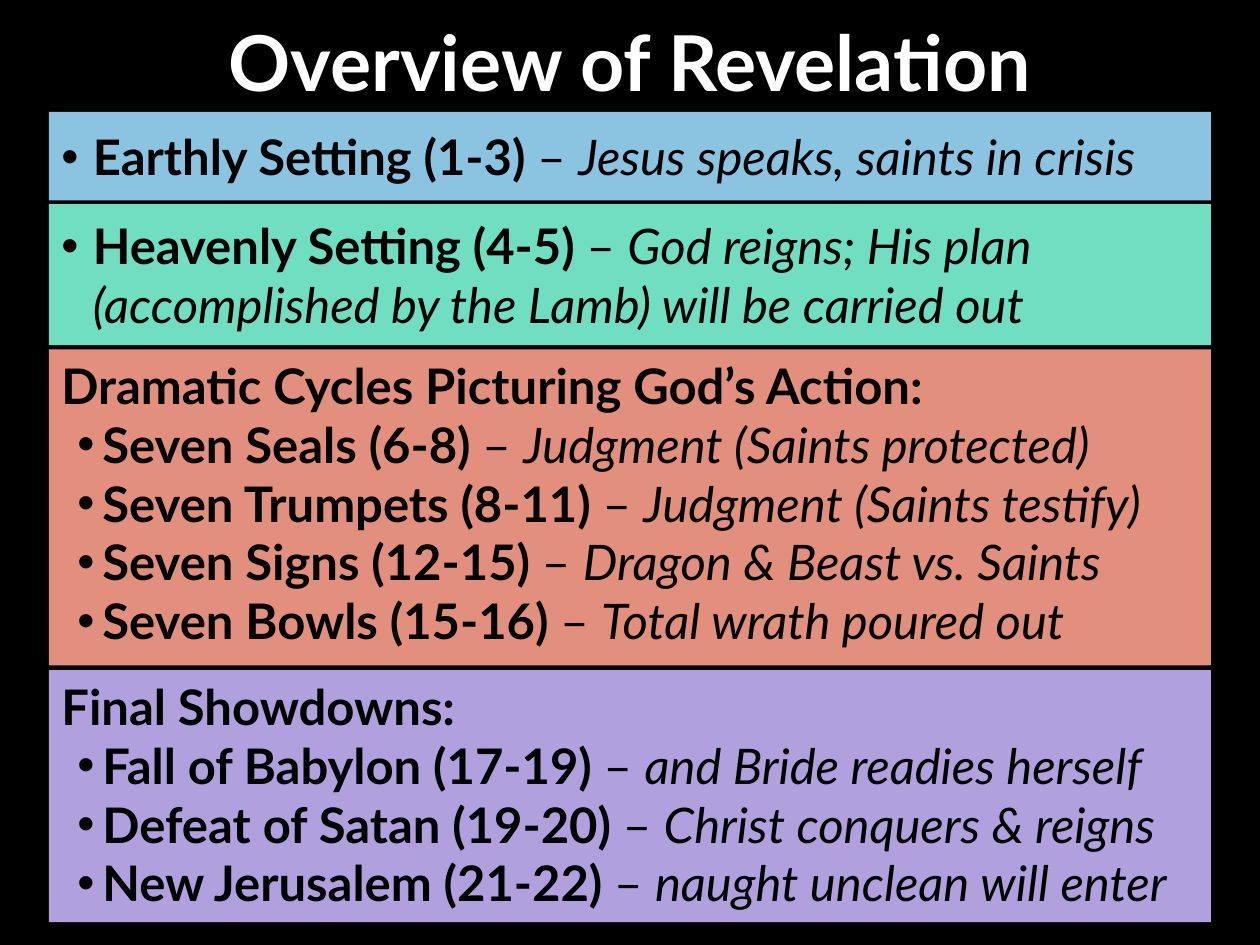
"""Build the Overview of Revelation slide."""
from dataclasses import dataclass

from lxml.etree import SubElement
from pptx import Presentation
from pptx.dml.color import RGBColor
from pptx.enum.shapes import MSO_SHAPE
from pptx.enum.text import MSO_ANCHOR, PP_ALIGN
from pptx.oxml.ns import qn
from pptx.util import Pt

COLORS = {
    "background": "000000", "title": "FFFFFF", "text": "000000",
    "earth": "8BC4E0", "heaven": "70DEC1", "cycles": "E28F7D", "final": "B0A0DD",
}
FONT = "Lato"
BAND_LEFT, BAND_WIDTH = 28, 664


@dataclass
class Band:
    """A coloured band with an optional heading and bulleted entries."""
    color: str
    top: float
    height: float
    entries: list[tuple[str, str]]
    heading: str = ""


BANDS = [
    Band("earth", 64, 50.5, [("Earthly Setting (1-3)", "Jesus speaks, saints in crisis")]),
    Band("heaven", 116.7, 80.6, [
        ("Heavenly Setting (4-5)",
         "God reigns; His plan (accomplished by the Lamb) will be carried out"),
    ]),
    Band("cycles", 199.6, 180.7, [
        ("Seven Seals (6-8)", "Judgment (Saints protected)"),
        ("Seven Trumpets (8-11)", "Judgment (Saints testify)"),
        ("Seven Signs (12-15)", "Dragon & Beast vs. Saints"),
        ("Seven Bowls (15-16)", "Total wrath poured out"),
    ], "Dramatic Cycles Picturing God’s Action:"),
    Band("final", 383, 144, [
        ("Fall of Babylon (17-19)", "and Bride readies herself"),
        ("Defeat of Satan (19-20)", "Christ conquers & reigns"),
        ("New Jerusalem (21-22)", "naught unclean will enter"),
    ], "Final Showdowns:"),
]


def color_of(name: str) -> RGBColor:
    """Look up a named colour."""
    return RGBColor.from_string(COLORS[name])


def add_span(para, text: str, size: float = 28, color: str = "text",
             bold: bool = False, italic: bool = False) -> None:
    """Append a formatted span to a paragraph."""
    span = para.add_run()
    span.text = text
    span.font.name = FONT
    span.font.size = Pt(size)
    span.font.bold = bold
    span.font.italic = italic
    span.font.color.rgb = color_of(color)


def set_bullet(para, margin: float, hanging: float) -> None:
    """Give a paragraph a bullet with a hanging indent."""
    properties = para._p.get_or_add_pPr()
    properties.set("marL", str(Pt(margin)))
    properties.set("indent", str(-Pt(hanging)))
    SubElement(properties, qn("a:buFont"), typeface="Arial")
    SubElement(properties, qn("a:buChar"), char="•")


def add_title(page, text: str) -> None:
    """Add the centred slide title."""
    box = page.shapes.add_textbox(Pt(50), Pt(6), Pt(620), Pt(64))
    frame = box.text_frame
    frame.word_wrap = True
    frame.vertical_anchor = MSO_ANCHOR.MIDDLE
    para = frame.paragraphs[0]
    para.alignment = PP_ALIGN.CENTER
    para.line_spacing = 0.9
    add_span(para, text, 44, "title", bold=True)


def add_band(page, band: Band) -> None:
    """Add one band and its text."""
    box = page.shapes.add_shape(MSO_SHAPE.RECTANGLE, Pt(BAND_LEFT), Pt(band.top),
                                Pt(BAND_WIDTH), Pt(band.height))
    box.shadow.inherit = False
    box.fill.solid()
    box.fill.fore_color.rgb = color_of(band.color)
    box.line.fill.background()
    frame = box.text_frame
    frame.word_wrap = True
    frame.vertical_anchor = MSO_ANCHOR.TOP if band.heading else MSO_ANCHOR.MIDDLE
    margin, hanging = (23.5, 14.4) if band.heading else (18, 18)
    lines = ([(band.heading, "")] if band.heading else []) + band.entries
    for index, (label, detail) in enumerate(lines):
        para = frame.add_paragraph() if index else frame.paragraphs[0]
        para.alignment = PP_ALIGN.LEFT
        if not detail:
            add_span(para, label, bold=True)
            continue
        set_bullet(para, margin, hanging)
        add_span(para, f"{label} ", bold=True)
        add_span(para, "– ")
        add_span(para, detail, italic=True)


def main() -> None:
    """Build and save the deck."""
    deck = Presentation()
    deck.slide_width, deck.slide_height = Pt(720), Pt(540)
    page = deck.slides.add_slide(deck.slide_layouts[6])
    page.background.fill.solid()
    page.background.fill.fore_color.rgb = color_of("background")
    add_title(page, "Overview of Revelation")
    for band in BANDS:
        add_band(page, band)
    deck.save("out.pptx")


if __name__ == "__main__":
    main()
